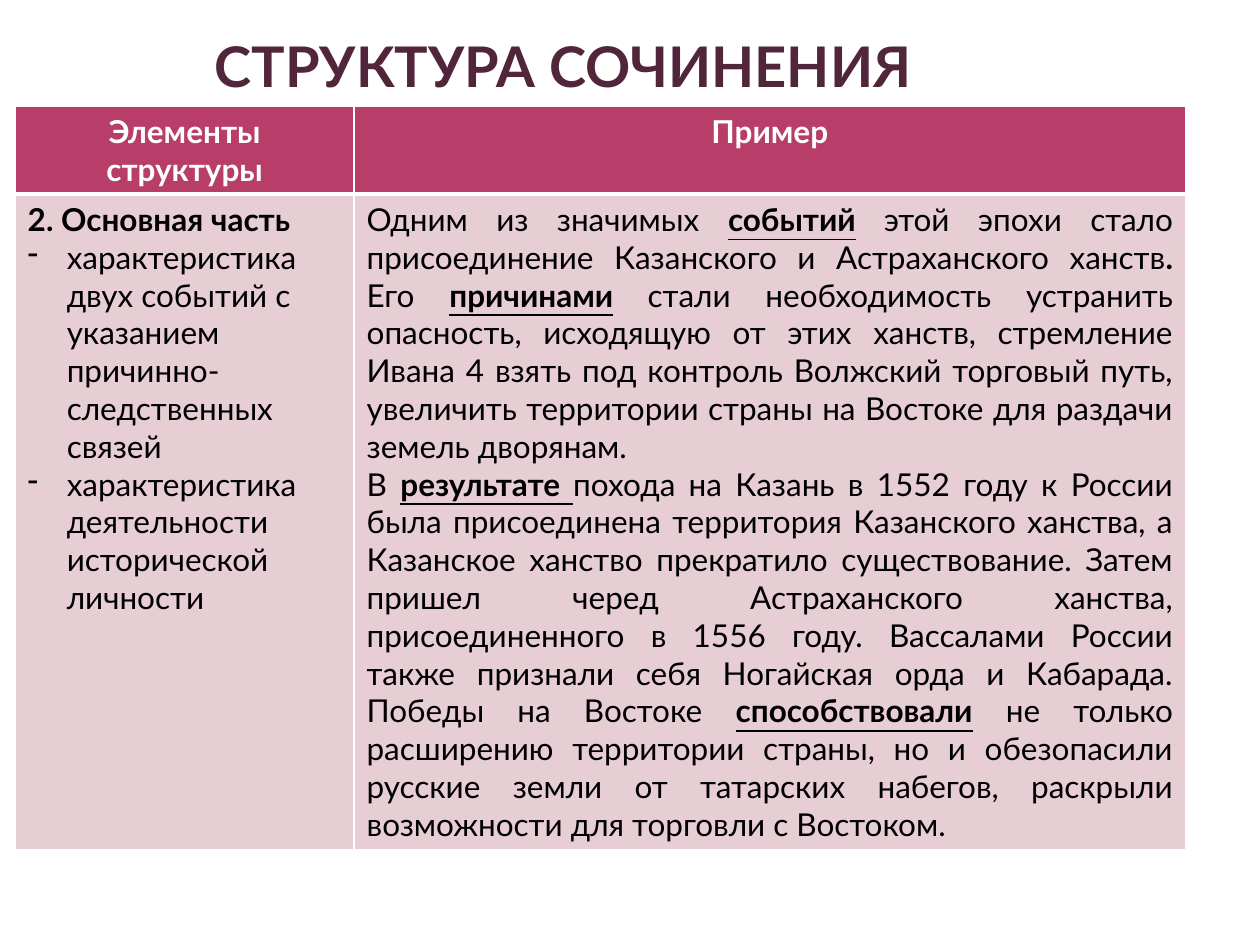
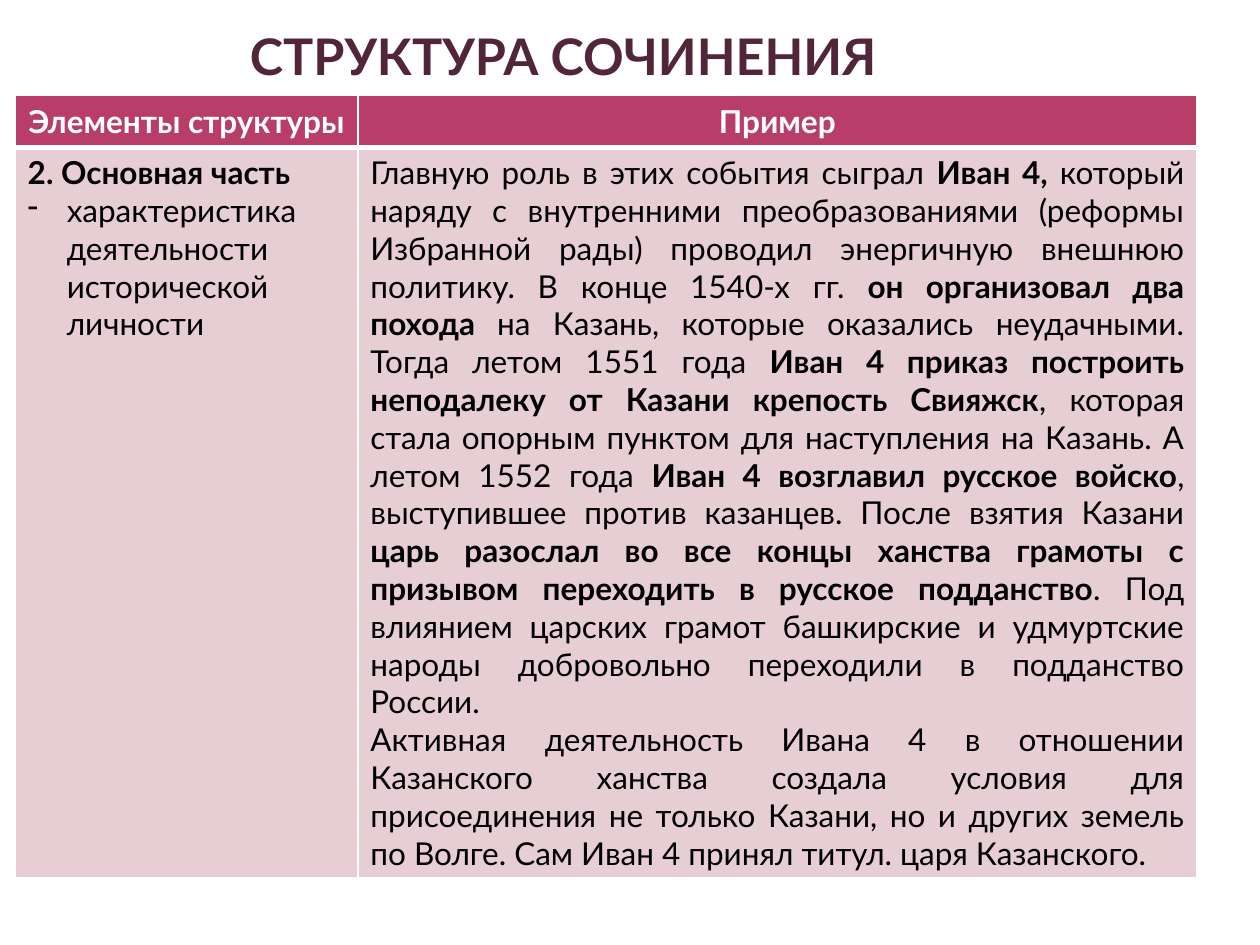
import pptx
import pptx.dml.color
import pptx.enum.text
import pptx.oxml
import pptx.oxml.ns
import pptx.util
from pptx.util import Inches

ALIGN = pptx.enum.text.PP_ALIGN
FONT = "Lato"
TITLE_COLOR = "51253A"
HEADER_FILL = "B83D68"
BODY_FILL = "E6CED4"
WHITE = "FFFFFF"
BLACK = "000000"
TEXT_SIZE = 18
TABLE_LEFT = 0.12

TITLE = "СТРУКТУРА СОЧИНЕНИЯ"
HEADERS = ["Элементы структуры", "Пример"]
PART_NAME = "2. Основная часть"
PERSON_TASK = "характеристика деятельности исторической личности"
EVENTS_TASK = "характеристика двух событий с указанием причинно-следственных связей"

PLAIN, BOLD, KEYWORD = "plain", "bold", "keyword"

EVENTS_EXAMPLE = [
    [
        ("Одним из значимых ", PLAIN),
        ("событий", KEYWORD),
        (" ", BOLD),
        ("этой эпохи стало присоединение Казанского и Астраханского ханств", PLAIN),
        (". ", BOLD),
        ("Его ", PLAIN),
        ("причинами", KEYWORD),
        (" ", BOLD),
        ("стали необходимость устранить опасность, исходящую от этих ханств, "
         "стремление Ивана 4 взять под контроль Волжский торговый путь, увеличить "
         "территории страны на Востоке для раздачи земель дворянам. ", PLAIN),
    ],
    [
        ("В ", PLAIN),
        ("результате ", KEYWORD),
        ("похода на Казань в 1552 году к России была присоединена территория "
         "Казанского ханства, а Казанское ханство прекратило существование. Затем "
         "пришел черед Астраханского ханства, присоединенного в 1556 году. Вассалами "
         "России также признали себя Ногайская орда и Кабарада. Победы на Востоке ", PLAIN),
        ("способствовали", KEYWORD),
        (" не только расширению территории страны, но и обезопасили русские земли от "
         "татарских набегов, раскрыли возможности для торговли с Востоком.", PLAIN),
    ],
]

PERSON_EXAMPLE = [
    [
        ("Главную роль в этих события сыграл ", PLAIN),
        ("Иван 4,", BOLD),
        (" который наряду с внутренними преобразованиями (реформы Избранной рады) "
         "проводил энергичную внешнюю политику. В конце 1540-х гг. ", PLAIN),
        ("он организовал два похода ", BOLD),
        ("на Казань, которые оказались неудачными. Тогда летом 1551 года ", PLAIN),
        ("Иван 4 приказ построить неподалеку от Казани крепость Свияжск", BOLD),
        (", которая стала опорным пунктом для наступления на Казань. "
         "А летом 1552 года ", PLAIN),
        ("Иван 4 возглавил русское войско", BOLD),
        (", выступившее против казанцев. После взятия Казани ", PLAIN),
        ("царь разослал во все концы ханства грамоты с призывом переходить "
         "в русское подданство", BOLD),
        (". Под влиянием царских грамот башкирские и удмуртские народы добровольно "
         "переходили в подданство России. ", PLAIN),
    ],
    [
        ("Активная деятельность Ивана 4 в отношении Казанского ханства создала условия "
         "для присоединения не только Казани, но и других земель по Волге. Сам Иван 4 "
         "принял титул. царя Казанского.", PLAIN),
    ],
]


def color(hex_string):
    return pptx.dml.color.RGBColor.from_string(hex_string)


class EssayDeck:
    """Holds the presentation, its style and the slide being built."""

    def __init__(self):
        self.presentation = pptx.Presentation()
        self.presentation.slide_width = Inches(10)
        self.presentation.slide_height = Inches(7.5)
        self.slide = None

    def add_slide(self):
        self.slide = self.presentation.slides.add_slide(self.presentation.slide_layouts[6])

    def add_run(self, paragraph, text, size, hex_color, style):
        run = paragraph.add_run()
        run.text = text
        run.font.name = FONT
        run.font.size = pptx.util.Pt(size)
        run.font.bold = style != PLAIN
        run.font.underline = style == KEYWORD
        run.font.color.rgb = color(hex_color)

    def add_title(self, height, size):
        box = self.slide.shapes.add_textbox(
            Inches(0.51), Inches(0.21), Inches(7.92), Inches(height))
        frame = box.text_frame
        frame.word_wrap = True
        frame.vertical_anchor = pptx.enum.text.MSO_ANCHOR.BOTTOM
        frame.margin_left = frame.margin_right = Inches(0.05)
        frame.margin_top = frame.margin_bottom = 0
        paragraph = frame.paragraphs[0]
        paragraph.alignment = ALIGN.CENTER
        self.add_run(paragraph, TITLE, size, TITLE_COLOR, BOLD)

    def add_dash(self, paragraph):
        properties = paragraph._p.get_or_add_pPr()
        properties.set("marL", str(Inches(0.31)))
        properties.set("indent", str(Inches(-0.31)))
        bullet = pptx.oxml.parse_xml(
            f'<a:buChar {pptx.oxml.ns.nsdecls("a")} char="-"/>')
        properties.append(bullet)

    def style_cell(self, cell, fill, bottom_width):
        """Draw the borders before the fill, as the schema orders them."""
        properties = cell._tc.get_or_add_tcPr()
        widths = {"lnL": 1, "lnR": 1, "lnT": 1, "lnB": bottom_width}
        for tag, width in widths.items():
            properties.append(pptx.oxml.parse_xml(
                f'<a:{tag} {pptx.oxml.ns.nsdecls("a")} w="{pptx.util.Pt(width)}">'
                f'<a:solidFill><a:srgbClr val="{WHITE}"/></a:solidFill></a:{tag}>'))
        cell.fill.solid()
        cell.fill.fore_color.rgb = color(fill)

    def fill_cell(self, cell, paragraphs, hex_color, alignment, dash_from=None):
        """Write lists of runs; paragraphs from index dash_from on get a dash."""
        frame = cell.text_frame
        for index, runs in enumerate(paragraphs):
            paragraph = frame.add_paragraph() if index else frame.paragraphs[0]
            paragraph.alignment = alignment
            if dash_from is not None and index >= dash_from:
                self.add_dash(paragraph)
            for text, style in runs:
                self.add_run(paragraph, text, TEXT_SIZE, hex_color, style)

    def add_table(self, top, widths, heights, tasks, example):
        table = self.slide.shapes.add_table(
            2, 2, Inches(TABLE_LEFT), Inches(top),
            Inches(sum(widths)), Inches(sum(heights))).table
        table.horz_banding = False
        for column, width in zip(table.columns, widths):
            column.width = Inches(width)
        for row, height in zip(table.rows, heights):
            row.height = Inches(height)
        for index, header in enumerate(HEADERS):
            self.style_cell(table.cell(0, index), HEADER_FILL, 3)
            self.fill_cell(table.cell(0, index), [[(header, BOLD)]], WHITE, ALIGN.CENTER)
            self.style_cell(table.cell(1, index), BODY_FILL, 1)
        elements = [[(PART_NAME, BOLD)]] + [[(task, PLAIN)] for task in tasks]
        self.fill_cell(table.cell(1, 0), elements, BLACK, ALIGN.LEFT, dash_from=1)
        self.fill_cell(table.cell(1, 1), example, BLACK, ALIGN.JUSTIFY)


def main():
    deck = EssayDeck()

    deck.add_slide()
    deck.add_title(0.57, 32)
    deck.add_table(0.84, [2.69, 6.6], [0.69, 5.2], [EVENTS_TASK, PERSON_TASK], EVENTS_EXAMPLE)

    deck.add_slide()
    deck.add_title(0.47, 28.8)
    deck.add_table(0.76, [2.72, 6.66], [0.41, 5.8], [PERSON_TASK], PERSON_EXAMPLE)

    deck.presentation.save("out.pptx")


if __name__ == "__main__":
    main()
